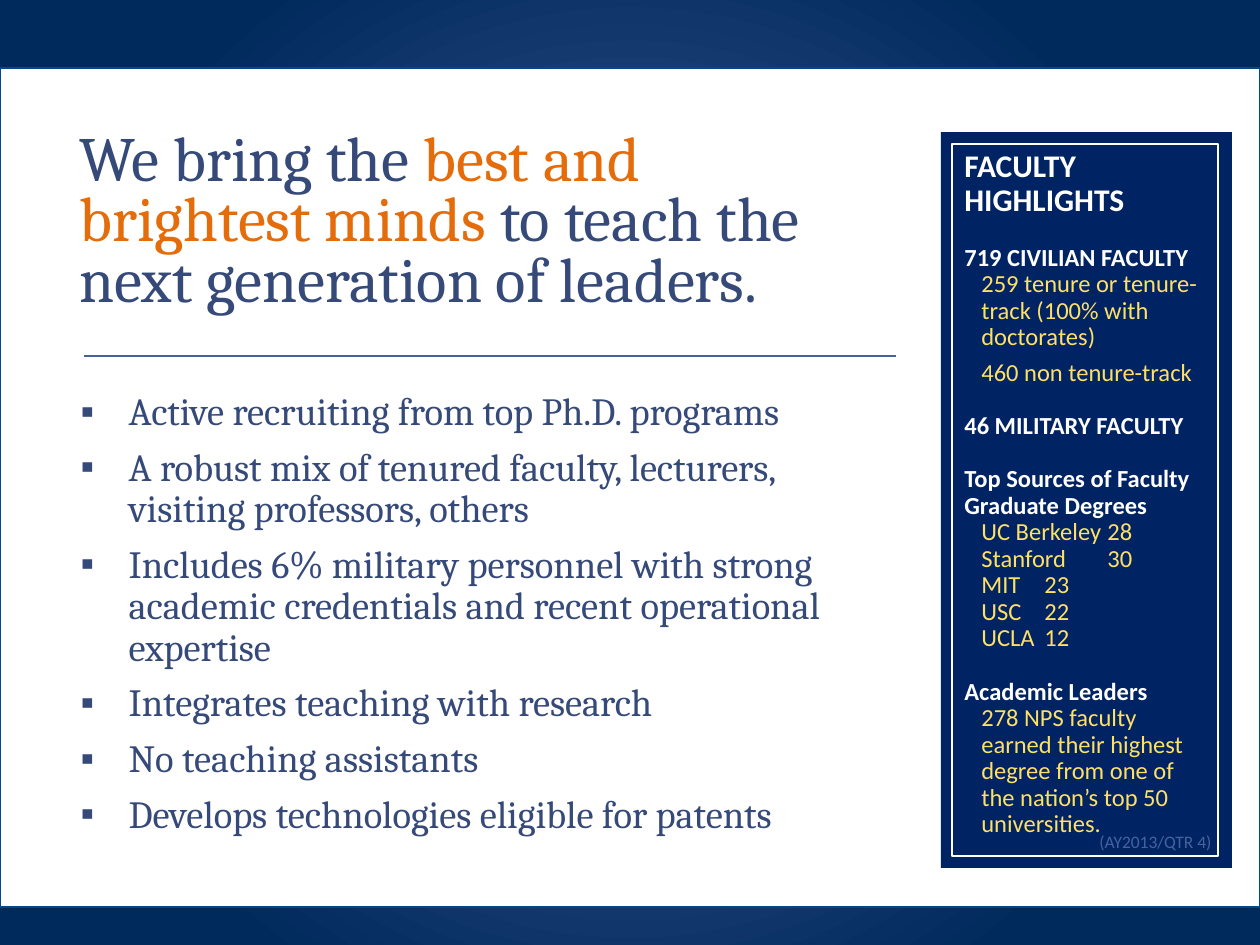
import pptx
import pptx.dml.color
import pptx.enum.shapes
import pptx.enum.text
import pptx.oxml.ns
import pptx.util
from lxml import etree

RGB = pptx.dml.color.RGBColor
Pt = pptx.util.Pt
qn = pptx.oxml.ns.qn

WHITE = RGB(0xFF, 0xFF, 0xFF)
SLATE = RGB(0x36, 0x4A, 0x7A)
ORANGE = RGB(0xE4, 0x6C, 0x0A)
STEEL = RGB(0x47, 0x61, 0x9D)
DEEP = RGB(0x00, 0x29, 0x5C)
EDGE = RGB(0x00, 0x48, 0x8A)
NAVY = RGB(0x00, 0x24, 0x63)
YELLOW = RGB(0xFF, 0xE0, 0x66)

SERIF, SANS = "Cambria", "Calibri"
EMU_PER_PX = 914400 / 126
INDENT = 17
COUNT_TAB = 235
BLANK_LINE = 15.4

TITLE_RUNS = [
    ("We bring the ", SLATE),
    ("best and\nbrightest minds", ORANGE),
    (" to teach the\nnext generation of leaders.", SLATE),
]
BULLETS = [
    "Active recruiting from top Ph.D. programs",
    "A robust mix of tenured faculty, lecturers, visiting professors, others",
    "Includes 6% military personnel with strong academic credentials and "
    "recent operational expertise",
    "Integrates teaching with research",
    "No teaching assistants",
    "Develops technologies eligible for patents",
]
# Each section: heading, then (detail, space before in points).
HIGHLIGHTS = [
    ("719 CIVILIAN FACULTY", [
        ("259 tenure or tenure-\ntrack (100% with\ndoctorates)", 0),
        ("460 non tenure-track", 5)]),
    ("46 MILITARY FACULTY", []),
    ("Top Sources of Faculty Graduate Degrees", [
        (f"{school}\t{count}", 0) for school, count in [
            ("UC Berkeley", 28), ("Stanford", 30), ("MIT", 23),
            ("USC", 22), ("UCLA", 12)]]),
    ("Academic Leaders", [
        ("278 NPS faculty\nearned their highest\ndegree from one of\n"
         "the nation’s top 50\nuniversities.", 0)]),
]


def px(n):
    return pptx.util.Emu(round(n * EMU_PER_PX))


def add_runs(p, text, size, color, font, bold=False):
    """Append text to a paragraph, turning each newline into a line break."""
    for i, line in enumerate(text.split("\n")):
        if i:
            p.add_line_break()
        r = p.add_run()
        r.text = line
        r.font.size, r.font.name, r.font.bold = Pt(size), font, bold
        r.font.color.rgb = color


def set_indent(p, left, first=0):
    pPr = p._p.get_or_add_pPr()
    pPr.set("marL", str(px(left)))
    pPr.set("indent", str(px(first)))
    return pPr


class SlideBuilder:
    def __init__(self, prs):
        self.slide = prs.slides.add_slide(prs.slide_layouts[1])

    def background(self, inner, outer):
        """Fill the background with a gradient spreading from the centre."""
        fill = self.slide.background.fill
        fill.gradient()
        for stop, color, pos in zip(fill.gradient_stops, (inner, outer), (0, 0.76)):
            stop.color.rgb, stop.position = color, pos
        grad = self.slide.element.find(".//" + qn("a:gradFill"))
        grad.remove(grad.find(qn("a:lin")))
        circle = etree.Element(qn("a:path"))
        circle.set("path", "circle")
        center = etree.SubElement(circle, qn("a:fillToRect"))
        for side in "ltrb":
            center.set(side, "50000")
        grad.find(qn("a:gsLst")).addnext(circle)

    def rect(self, box, fill=None, line=None):
        sp = self.slide.shapes.add_shape(
            pptx.enum.shapes.MSO_SHAPE.RECTANGLE, *map(px, box))
        sp.shadow.inherit = False
        if fill is None:
            sp.fill.background()
        else:
            sp.fill.solid()
            sp.fill.fore_color.rgb = fill
        if line is None:
            sp.line.fill.background()
        else:
            sp.line.color.rgb, sp.line.width = line, Pt(0.75)
        return sp

    def rule(self, x1, x2, y, color):
        c = self.slide.shapes.add_connector(
            pptx.enum.shapes.MSO_CONNECTOR.STRAIGHT, px(x1), px(y), px(x2), px(y))
        c.line.color.rgb, c.line.width = color, Pt(1.5)
        etree.SubElement(c._element.spPr, qn("a:effectLst"))

    def frame(self, sp, box=None, anchor=pptx.enum.text.MSO_ANCHOR.TOP):
        if box:
            sp.left, sp.top, sp.width, sp.height = map(px, box)
        tf = sp.text_frame
        tf.word_wrap = True
        tf.auto_size = pptx.enum.text.MSO_AUTO_SIZE.NONE
        tf.vertical_anchor = anchor
        return tf

    def paragraph(self, tf, spacing, before=0):
        """Return the empty first paragraph, or a new one once it has text."""
        p = tf.paragraphs[0]
        if p.runs:
            p = tf.add_paragraph()
            p.space_before = Pt(before)
        else:
            p.space_before = Pt(0)
        p.alignment = pptx.enum.text.PP_ALIGN.LEFT
        p.line_spacing = spacing
        return p

    def title(self, box, runs):
        tf = self.frame(self.slide.shapes.title, box, pptx.enum.text.MSO_ANCHOR.MIDDLE)
        p = self.paragraph(tf, 0.8)
        for text, color in runs:
            add_runs(p, text, 36, color, SERIF)

    def bullets(self, box, items):
        tf = self.frame(self.slide.placeholders[1], box)
        for item in items:
            p = self.paragraph(tf, 0.9, 8)
            pPr = set_indent(p, 48, -48)
            etree.SubElement(pPr, qn("a:buChar")).set("char", "▪")
            add_runs(p, item, 22, SLATE, SERIF)

    def highlights(self, box, heading, sections):
        tf = self.frame(self.rect(box, line=WHITE))
        add_runs(self.paragraph(tf, 0.9), heading, 18, WHITE, SANS, True)
        for name, details in sections:
            p = self.paragraph(tf, 0.9, BLANK_LINE)
            add_runs(p, name, 14, WHITE, SANS, True)
            for text, before in details:
                p = self.paragraph(tf, 0.9, before)
                pPr = set_indent(p, INDENT)
                if "\t" in text:
                    tabs = etree.SubElement(pPr, qn("a:tabLst"))
                    tab = etree.SubElement(tabs, qn("a:tab"))
                    tab.set("pos", str(px(COUNT_TAB)))
                    tab.set("algn", "r")
                add_runs(p, text, 14, YELLOW, SANS)

    def label(self, box, text):
        tf = self.frame(self.slide.shapes.add_textbox(*map(px, box)))
        add_runs(self.paragraph(tf, 0.9), text, 10, STEEL, SANS)


def main():
    prs = pptx.Presentation()
    prs.slide_width, prs.slide_height = px(1260), px(945)
    s = SlideBuilder(prs)
    s.background(STEEL, DEEP)
    page = s.rect((0, 68, 1260, 839), WHITE, EDGE)
    s.slide.shapes._spTree.insert(2, page._element)  # behind the placeholders
    s.title((67, 131, 958, 185), TITLE_RUNS)
    s.rule(84, 896, 356, STEEL)
    s.bullets((68, 386, 828, 483), BULLETS)
    s.rect((941, 132, 291, 736), NAVY)
    s.highlights((952, 144, 266, 712), "FACULTY HIGHLIGHTS", HIGHLIGHTS)
    s.label((1087, 827, 147, 48), "(AY2013/QTR 4)")
    prs.save("out.pptx")


if __name__ == "__main__":
    main()
